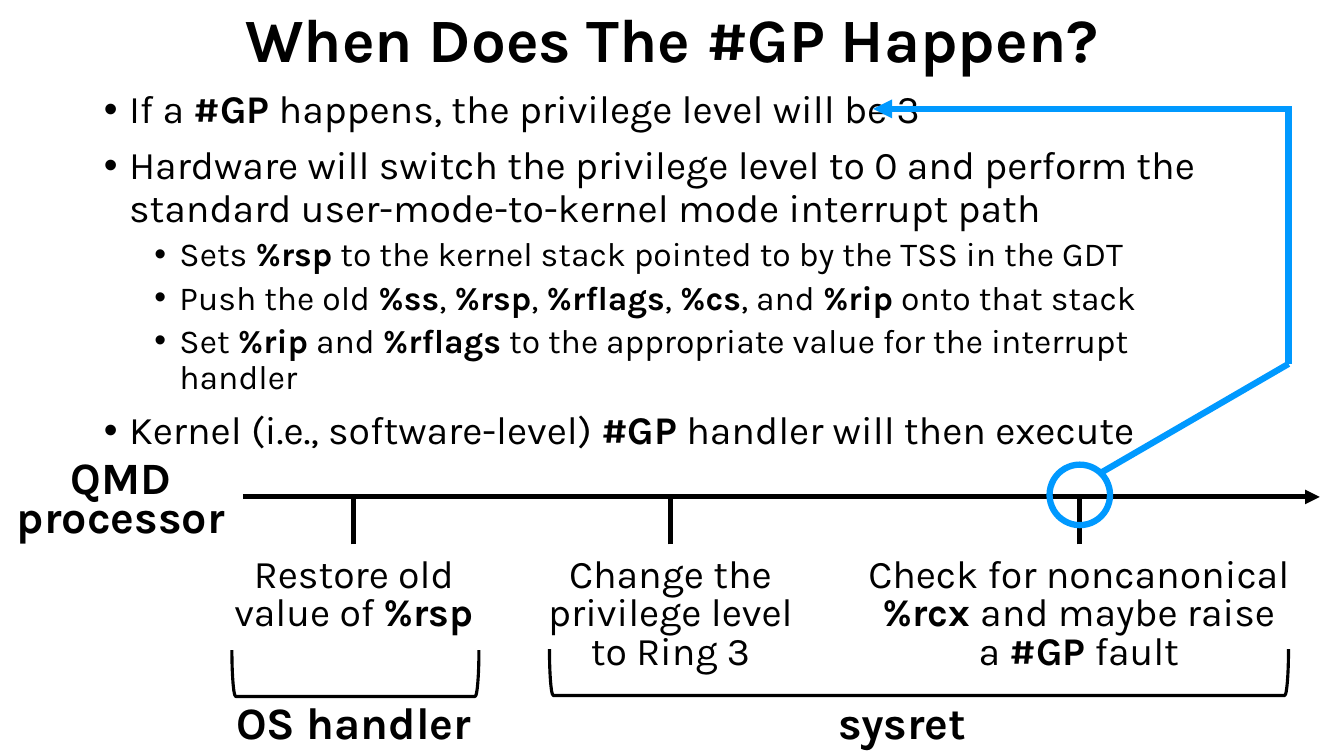
from lxml.etree import SubElement
from pptx import Presentation
from pptx.dml.color import RGBColor
from pptx.enum.shapes import MSO_CONNECTOR as Connector, MSO_SHAPE as Shape
from pptx.enum.text import MSO_ANCHOR as Anchor, MSO_AUTO_SIZE as AutoSize, PP_ALIGN as Align
from pptx.oxml.ns import qn
from pptx.util import Inches, Pt

FONT = "Karla"
BLACK, BLUE = "000000", "0099FF"
LINE_PITCH = 0.38

BULLETS = [
    (0, "If a *#GP* happens, the privilege level will be 3"),
    (0, "Hardware will switch the privilege level to 0 and perform the "
        "standard user-mode-to-kernel mode interrupt path"),
    (1, "Sets *%rsp* to the kernel stack pointed to by the TSS in the GDT"),
    (1, "Push the old *%ss*, *%rsp*, *%rflags*, *%cs*, and *%rip* onto that stack"),
    (1, "Set *%rip* and *%rflags* to the appropriate value for the interrupt handler"),
    (0, "Kernel (i.e., software-level) *#GP* handler will then execute"),
]
# Tick position, label width, label lines
STEPS = [
    (3.51, 2.64, ["Restore old", "value of *%rsp*"]),
    (6.65, 2.64, ["Change the", "privilege level", "to Ring 3"]),
    (10.71, 4.4, ["Check for noncanonical", "*%rcx *and maybe raise", "a *#GP* fault"]),
]
# Left edge, width, bracket top, name centre, name
PHASES = [
    (2.3, 2.45, 6.45, 3.51, "OS handler"),
    (5.45, 7.33, 6.44, 8.95, "sysret"),
]


def paint(colour_format, colour):
    colour_format.rgb = RGBColor.from_string(colour)


def write(paragraph, text, size=28, bold=False, colour=BLACK, align=None, spacing=None):
    """Fill a paragraph; text between asterisks is bold."""
    paragraph.alignment = align
    if spacing:
        paragraph.line_spacing = spacing
    for i, part in enumerate(text.split("*")):
        if part:
            run = paragraph.add_run()
            run.text = part
            run.font.name, run.font.size = FONT, Pt(size)
            run.font.bold = bold or i % 2 == 1
            paint(run.font.color, colour)


def add_label(slide, centre, top, width, text, height=0.57, **style):
    label = slide.shapes.add_textbox(Inches(centre - width / 2), Inches(top),
                                     Inches(width), Inches(height))
    label.text_frame.word_wrap = True
    write(label.text_frame.paragraphs[0], text, align=Align.CENTER, **style)


def add_line(slide, start, end, colour=BLACK, weight=3.5, arrow=False):
    line = slide.shapes.add_connector(Connector.STRAIGHT, *map(Inches, start + end))
    paint(line.line.color, colour)
    line.line.width = Pt(weight)
    if arrow:
        SubElement(line.line._get_or_add_ln(), qn("a:tailEnd"), type="triangle")
    SubElement(line._element.spPr, qn("a:effectLst"))


def add_outline(slide, kind, left, top, width, height, colour, weight):
    outline = slide.shapes.add_shape(kind, *map(Inches, (left, top, width, height)))
    outline.shadow.inherit = False
    outline.fill.background()
    paint(outline.line.color, colour)
    outline.line.width = Pt(weight)
    return outline


def place(placeholder, left, top, width, height):
    placeholder.left, placeholder.top = Inches(left), Inches(top)
    placeholder.width, placeholder.height = Inches(width), Inches(height)
    frame = placeholder.text_frame
    frame.word_wrap, frame.auto_size = True, AutoSize.NONE
    return frame


def fill_title(slide, left, top, width, height):
    frame = place(slide.shapes.title, left, top, width, height)
    frame.vertical_anchor = Anchor.MIDDLE
    write(frame.paragraphs[0], "When Does The #GP Happen?", size=44, bold=True,
          align=Align.CENTER, spacing=0.9)


def fill_bullets(slide, left, top, width, height):
    frame = place(slide.placeholders[1], left, top, width, height)
    frame.vertical_anchor = Anchor.TOP
    for i, (level, text) in enumerate(BULLETS):
        item = frame.add_paragraph() if i else frame.paragraphs[0]
        write(item, text, size=24 if level else 28, spacing=0.9)
        item.level = level
        item.space_before = Pt(5 if level else 10)
        props = item._p.get_or_add_pPr()
        props.set("marL", str(Inches(0.25 + 0.5 * level)))
        props.set("indent", str(Inches(-0.25)))
        SubElement(props, qn("a:buFont"), typeface="Arial")
        SubElement(props, qn("a:buChar"), char="•")


def draw_timeline(slide, left, top, width):
    # Processor name and time axis
    for i, word in enumerate(["QMD", "processor"]):
        add_label(slide, left - 1.21, top - 0.52 + 0.39 * i, 2.45, word,
                  height=0.64, size=32, bold=True)
    add_line(slide, (left, top), (left + width, top), arrow=True)
    # Ticks and step labels
    for tick, label_width, lines in STEPS:
        add_line(slide, (tick, top + 0.47), (tick, top))
        centre = 10.7 if tick == STEPS[-1][0] else tick
        for i, text in enumerate(lines):
            add_label(slide, centre, top + 0.47 + LINE_PITCH * i, label_width, text)


def draw_phase(slide, left, width, top, centre, name):
    # The bracket is turned a quarter, so its box is upright around the same centre
    depth = 0.46
    bracket = add_outline(slide, Shape.LEFT_BRACKET, left + (width - depth) / 2,
                          top + (depth - width) / 2, depth, width, BLACK, 2.25)
    bracket.rotation = 270
    add_label(slide, centre, 6.84, 2.58, name, height=0.64, size=32, bold=True)


def draw_fault_path(slide, left, top, right, bottom):
    """Circle the faulting step and lead from it back to the first bullet."""
    size, bend = 0.6, 3.61
    add_outline(slide, Shape.OVAL, 10.41, bottom - size, size, size, BLUE, 4.5)
    add_line(slide, (10.92, 4.69), (right, bend), BLUE, 4.5)
    add_line(slide, (right, bend), (right, top - 0.03), BLUE, 4.5)
    add_line(slide, (right, top), (left, top), BLUE, 4.5, arrow=True)


def main():
    deck = Presentation()
    deck.slide_width, deck.slide_height = Inches(13.33), Inches(7.5)
    slide = deck.slides.add_slide(deck.slide_layouts[1])
    fill_title(slide, 0.92, 0, 11.5, 0.84)
    fill_bullets(slide, 0.93, 0.84, 11.09, 3.61)
    draw_timeline(slide, 2.41, 4.93, 10.68)
    for phase in PHASES:
        draw_phase(slide, *phase)
    draw_fault_path(slide, 8.66, 1.08, 12.78, 5.21)
    deck.save("out.pptx")


if __name__ == "__main__":
    main()
